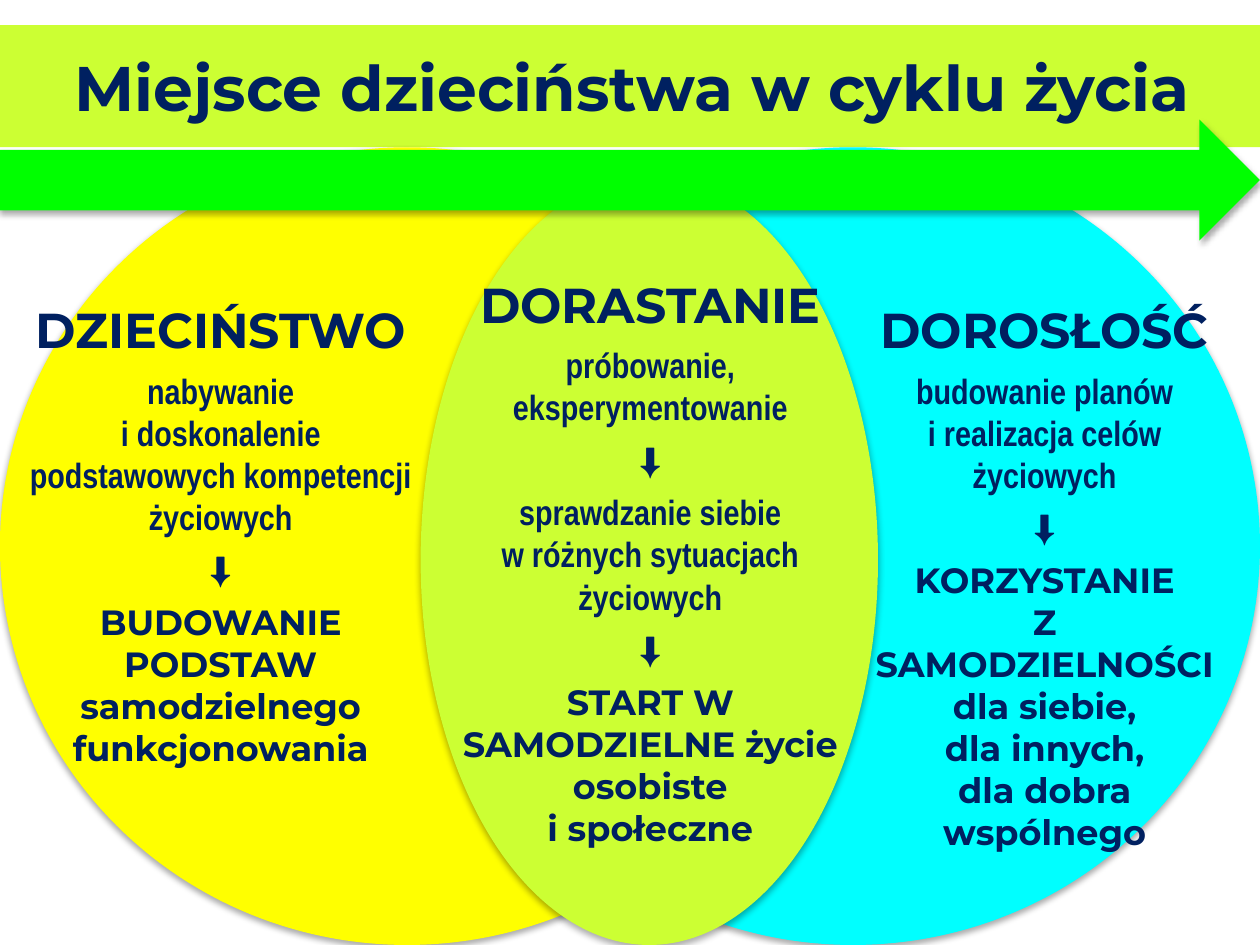
from lxml import etree
from pptx import Presentation
from pptx.dml.color import RGBColor
from pptx.enum.shapes import MSO_SHAPE
from pptx.enum.text import MSO_ANCHOR, PP_ALIGN
from pptx.oxml.ns import qn
from pptx.util import Cm, Pt

OVAL = MSO_SHAPE.OVAL
ARROW = MSO_SHAPE.RIGHT_ARROW
CENTER = PP_ALIGN.CENTER
MIDDLE = MSO_ANCHOR.MIDDLE

NAVY = RGBColor(0x00, 0x20, 0x60)
LIME = RGBColor(0xCC, 0xFF, 0x33)
YELLOW = RGBColor(0xFF, 0xFF, 0x00)
CYAN = RGBColor(0x00, 0xFF, 0xFF)
GREEN = RGBColor(0x00, 0xFF, 0x00)

WIDE = "Montserrat"
NARROW = "Arial Narrow"
DOWN = "⬇"

WIDTH, HEIGHT = 25.4, 19.05
TOP = 2.97
SIDE_W = 16.41

# Each stage: box in cm, heading, steps joined by down arrows
STAGES = [
    ((9.07, 5.41, 8.08, 9.91), "DORASTANIE",
     ["próbowanie, eksperymentowanie",
      "sprawdzanie siebie\nw różnych sytuacjach życiowych",
      "START W SAMODZIELNE życie osobiste\ni społeczne"]),
    ((0.08, 5.92, 8.74, 9.96), "DZIECIŃSTWO",
     ["nabywanie\ni doskonalenie podstawowych kompetencji życiowych",
      "BUDOWANIE\nPODSTAW\nsamodzielnego funkcjonowania"]),
    ((17.2, 5.92, 7.72, 10.39), "DOROSŁOŚĆ",
     ["budowanie planów\ni realizacja celów życiowych",
      "KORZYSTANIE\nZ SAMODZIELNOŚCI\ndla siebie,\ndla innych,\ndla dobra wspólnego"]),
]


def add_shadow(shape):
    """Give the shape a soft shadow that falls straight down."""
    shape.shadow.inherit = False
    effects = shape._element.spPr.find(qn("a:effectLst"))
    outer = etree.SubElement(effects, qn("a:outerShdw"), blurRad=str(Pt(3.5)),
                             dist=str(Pt(2.2)), dir="5400000", rotWithShape="0")
    color = etree.SubElement(outer, qn("a:srgbClr"), val="000000")
    etree.SubElement(color, qn("a:alpha"), val="32000")


def add_form(slide, kind, box, color):
    shape = slide.shapes.add_shape(kind, *map(Cm, box))
    shape.fill.solid()
    shape.fill.fore_color.rgb = color
    shape.line.fill.background()
    add_shadow(shape)


def add_box(slide, box):
    shape = slide.shapes.add_textbox(*map(Cm, box))
    shape.text_frame.word_wrap = True
    return shape


def write(para, text, size, face):
    para.text = text.replace("\n", "\v")
    para.alignment = CENTER
    font = para.font
    font.size, font.name, font.bold = Pt(size), face, True
    font.color.rgb = NAVY


def add_title(slide, text):
    shape = add_box(slide, (0, 0.51, 25.48, 2.46))
    shape.fill.solid()
    shape.fill.fore_color.rgb = LIME
    frame = shape.text_frame
    frame.vertical_anchor = MIDDLE
    write(frame.paragraphs[0], text, 36, WIDE)


def add_stage(slide, box, head, steps):
    """Write a heading and its steps; the last step is the outcome."""
    frame = add_box(slide, box).text_frame
    write(frame.paragraphs[0], head, 28, WIDE)
    for step in steps[:-1]:
        write(frame.add_paragraph(), step, 20, NARROW)
        write(frame.add_paragraph(), DOWN, 20, NARROW)
    write(frame.add_paragraph(), steps[-1], 20, WIDE)
    for para in frame.paragraphs:
        para.space_after = Pt(6)


def main():
    deck = Presentation()
    deck.slide_width, deck.slide_height = Cm(WIDTH), Cm(HEIGHT)
    slide = deck.slides.add_slide(deck.slide_layouts[6])
    add_title(slide, "Miejsce dzieciństwa w cyklu życia")
    side_h = HEIGHT - TOP
    add_form(slide, OVAL, (0, TOP, SIDE_W, side_h), YELLOW)
    add_form(slide, OVAL, (WIDTH - SIDE_W, TOP, SIDE_W, side_h), CYAN)
    add_form(slide, OVAL, (8.48, 3.53, 9.22, 15.52), LIME)
    for box, head, steps in STAGES:
        add_stage(slide, box, head, steps)
    add_form(slide, ARROW, (0, 2.41, WIDTH, 2.44), GREEN)
    deck.save("out.pptx")


if __name__ == "__main__":
    main()
